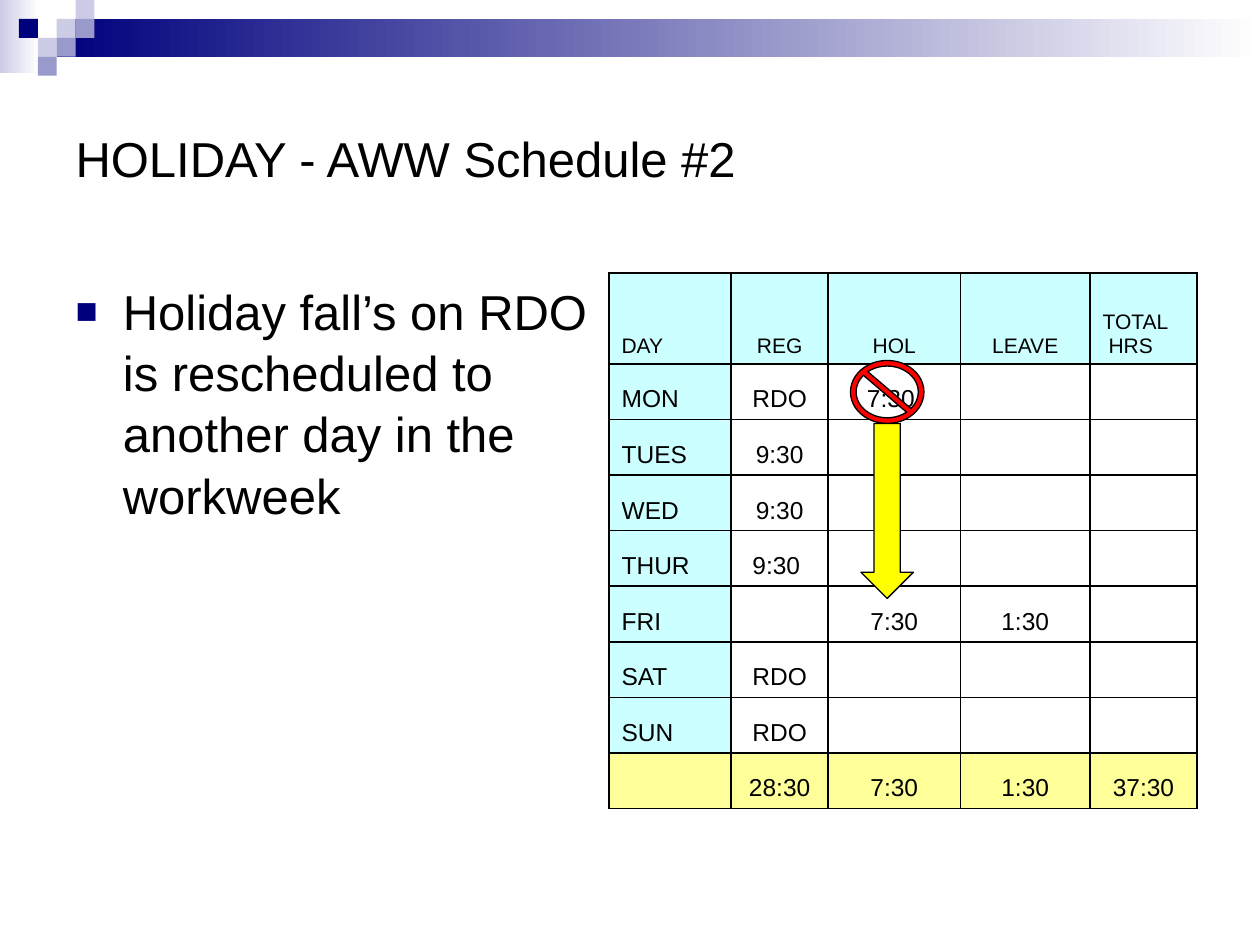
from lxml import etree
from pptx import Presentation
from pptx.dml.color import RGBColor
from pptx.enum.shapes import MSO_SHAPE
from pptx.enum.text import MSO_ANCHOR, MSO_AUTO_SIZE, PP_ALIGN
from pptx.oxml.ns import qn
from pptx.util import Pt

RECT, NO_SIGN, DOWN = MSO_SHAPE.RECTANGLE, MSO_SHAPE.NO_SYMBOL, MSO_SHAPE.DOWN_ARROW
LEFT, CENTER = PP_ALIGN.LEFT, PP_ALIGN.CENTER
TOP, MIDDLE, BOTTOM = MSO_ANCHOR.TOP, MSO_ANCHOR.MIDDLE, MSO_ANCHOR.BOTTOM
NO_FIT = MSO_AUTO_SIZE.NONE
NAVY, PERIWINKLE, LAVENDER = "00007D", "9999CC", "CCCCE6"
BLACK, WHITE, CYAN, CREAM = "000000", "FFFFFF", "CCFFFF", "FFFF99"


def color(value):
    return RGBColor.from_string(value)


def apply(target, values):
    for name, value in values.items():
        setattr(target, name, value)


def add_xml(parent, tag, **attributes):
    return etree.SubElement(parent, qn(tag), attributes)


class SlideBuilder:
    """Holds the text style and the current slide, and adds its elements."""

    def __init__(self, slide, font):
        self.slide = slide
        self.font = font

    def style(self, paragraph, size, align=LEFT):
        paragraph.alignment = align
        apply(paragraph.font, {"name": self.font, "size": Pt(size), "bold": False})
        paragraph.font.color.rgb = color(BLACK)

    def placeholder(self, index, text, box, anchor):
        holder = self.slide.placeholders[index]
        apply(holder, dict(zip(("left", "top", "width", "height"), map(Pt, box))))
        frame = holder.text_frame
        frame.text = text
        apply(frame, {"vertical_anchor": anchor, "word_wrap": True, "auto_size": NO_FIT})
        self.style(frame.paragraphs[0], 28)
        return frame.paragraphs[0]

    def title(self, text, box):
        self.placeholder(0, text, box, MIDDLE)

    def bullet(self, text, box):
        paragraph = self.placeholder(1, text, box, TOP)
        paragraph.line_spacing = 1.04
        properties = paragraph._p.get_or_add_pPr()
        properties.set("marL", str(Pt(27)))
        properties.set("indent", str(-Pt(27)))
        add_xml(add_xml(properties, "a:buClr"), "a:srgbClr", val=NAVY)
        add_xml(properties, "a:buSzPct", val="75000")
        add_xml(properties, "a:buFont", typeface=self.font)
        add_xml(properties, "a:buChar", char="■")

    def shape(self, kind, box, fill, outline=None, adjustment=None):
        shape = self.slide.shapes.add_shape(kind, *map(Pt, box))
        shape.shadow.inherit = False
        if isinstance(fill, tuple):
            shape.fill.gradient()
            shape.fill.gradient_angle = 0
            for stop, value in zip(shape.fill.gradient_stops, fill):
                stop.color.rgb = color(value)
        else:
            shape.fill.solid()
            shape.fill.fore_color.rgb = color(fill)
        if outline:
            shape.line.color.rgb = color(outline)
            shape.line.width = Pt(0.75)
        else:
            shape.line.fill.background()
        if adjustment is not None:
            shape.adjustments[0] = adjustment

    def border(self, cell):
        properties = cell._tc.get_or_add_tcPr()
        for side in "LRTB":
            line = add_xml(properties, f"a:ln{side}", w=str(Pt(1)))
            add_xml(add_xml(line, "a:solidFill"), "a:srgbClr", val=BLACK)

    def table(self, rows, left, top, widths, heights):
        size = (left, top, sum(widths), sum(heights))
        table = self.slide.shapes.add_table(len(rows), len(widths), *map(Pt, size)).table
        apply(table, {"first_row": False, "horz_banding": False})
        for column, width in zip(table.columns, widths):
            column.width = Pt(width)
        for row, height in zip(table.rows, heights):
            row.height = Pt(height)
        last = len(rows) - 1
        for r, row in enumerate(rows):
            for c, text in enumerate(row):
                cell = table.cell(r, c)
                self.border(cell)
                cell.vertical_anchor = BOTTOM
                fill = CREAM if r == last else CYAN if r == 0 or c == 0 else None
                if fill:
                    cell.fill.solid()
                    cell.fill.fore_color.rgb = color(fill)
                else:
                    cell.fill.background()
                cell.text = text
                align = LEFT if c == 0 or "\n" in text else CENTER
                for paragraph in cell.text_frame.paragraphs:
                    self.style(paragraph, 14 if r else 12, align)


SCHEDULE = [
    ("DAY", "REG", "HOL", "LEAVE", "TOTAL\n HRS"),
    ("MON", "RDO", "7:30 ", "", ""),
    ("TUES", "9:30", "", "", ""),
    ("WED", "9:30", "", "", ""),
    ("THUR", "9:30 ", "", "", ""),
    ("FRI", "", "7:30", "1:30", ""),
    ("SAT", "RDO", "", "", ""),
    ("SUN", "RDO", "", "", ""),
    ("", "28:30", "7:30", "1:30", "37:30"),
]
TILE = 10.8
MOSAIC = [
    (3, 1, LAVENDER), (4, 0, LAVENDER), (4, 1, PERIWINKLE), (2, 2, LAVENDER),
    (1, 1, NAVY), (3, 2, PERIWINKLE), (2, 3, PERIWINKLE),
]


def main():
    deck = Presentation()
    apply(deck, {"slide_width": Pt(720), "slide_height": Pt(540)})
    page = SlideBuilder(deck.slides.add_slide(deck.slide_layouts[1]), "Arial")

    page.shape(RECT, (0, 0, 22.3, 41.8), (LAVENDER, WHITE))
    page.shape(RECT, (3 * TILE, TILE, 720 - 3 * TILE, 2 * TILE), (NAVY, WHITE))
    for column, row, fill in MOSAIC:
        page.shape(RECT, (column * TILE, row * TILE, TILE, TILE), fill)

    page.title("HOLIDAY - AWW Schedule #2", (36, 36, 648, 108))
    page.bullet("Holiday fall’s on RDO is rescheduled to another day in the workweek",
                (36, 156, 318, 306))
    page.table(SCHEDULE, 348, 156, (69.8, 55.5, 75.5, 74.2, 61), [52] + [31.75] * 8)
    page.shape(NO_SIGN, (486, 206, 42, 36), "FF0000", BLACK, 0.09)
    page.shape(DOWN, (492, 242, 30, 100), "FFFF00", BLACK)
    deck.save("out.pptx")


if __name__ == "__main__":
    main()
